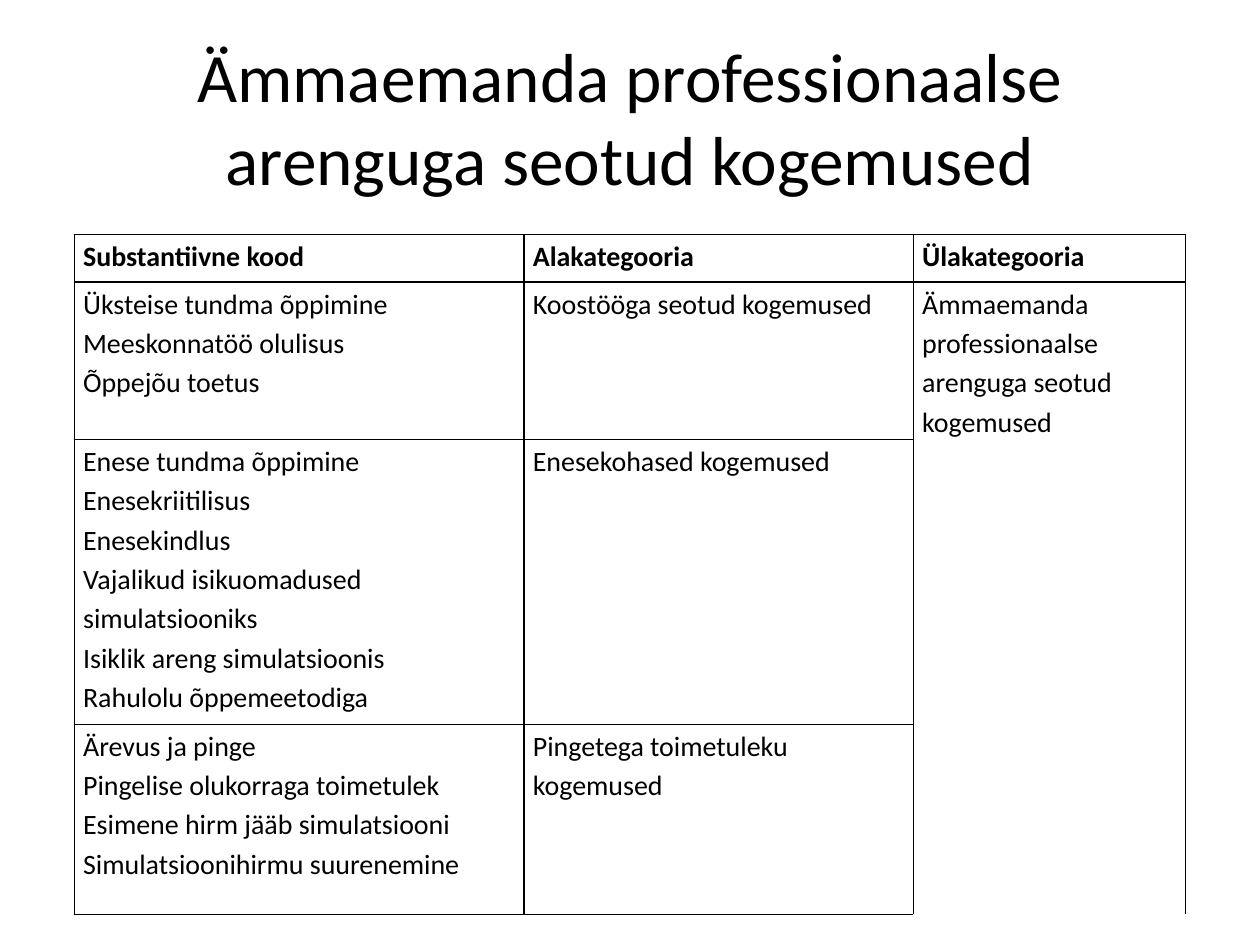
"""Build a slide with a table of codes and categories of midwives' professional growth."""
import lxml.etree
import pptx
import pptx.dml.color
import pptx.enum.text
import pptx.oxml.ns
import pptx.util

BLACK = pptx.dml.color.RGBColor(0, 0, 0)
FONT = "Calibri"
TOPIC = "Ämmaemanda professionaalse arenguga seotud kogemused"
COLUMN_WIDTHS = [3.57, 3.09, 2.16]
ROW_HEIGHTS = [0.38, 1.25, 2.26, 1.51]
ROWS = [
    ["Substantiivne kood", "Alakategooria", "Ülakategooria"],
    ["Üksteise tundma õppimine\nMeeskonnatöö olulisus\nÕppejõu toetus",
     "Koostööga seotud kogemused", TOPIC],
    ["Enese tundma õppimine\nEnesekriitilisus\nEnesekindlus\n"
     "Vajalikud isikuomadused simulatsiooniks\n"
     "Isiklik areng simulatsioonis\nRahulolu õppemeetodiga",
     "Enesekohased kogemused", ""],
    ["Ärevus ja pinge\nPingelise olukorraga toimetulek\n"
     "Esimene hirm jääb simulatsiooni\nSimulatsioonihirmu suurenemine",
     "Pingetega toimetuleku kogemused", ""],
]


def add_borders(cell, sides):
    properties = cell._tc.get_or_add_tcPr()
    for side in sides:
        line = lxml.etree.SubElement(
            properties, pptx.oxml.ns.qn(f"a:ln{side}"), w=str(pptx.util.Pt(1)))
        fill = lxml.etree.SubElement(line, pptx.oxml.ns.qn("a:solidFill"))
        lxml.etree.SubElement(fill, pptx.oxml.ns.qn("a:srgbClr"), val=str(BLACK))


def style_paragraph(paragraph, size, bold=False):
    paragraph.font.name = FONT
    paragraph.font.size = pptx.util.Pt(size)
    paragraph.font.bold = bold
    paragraph.font.color.rgb = BLACK


presentation = pptx.Presentation()
presentation.slide_width = pptx.util.Inches(10)
presentation.slide_height = pptx.util.Inches(7.5)
slide = presentation.slides.add_slide(presentation.slide_layouts[6])
width, height = presentation.slide_width, presentation.slide_height

title = slide.shapes.add_textbox(
    int(width * 0.05), int(height * 0.04), int(width * 0.9), pptx.util.Inches(1.25))
title.text_frame.word_wrap = True
title.text_frame.vertical_anchor = pptx.enum.text.MSO_ANCHOR.MIDDLE
title.text_frame.text = TOPIC
title_paragraph = title.text_frame.paragraphs[0]
title_paragraph.alignment = pptx.enum.text.PP_ALIGN.CENTER
style_paragraph(title_paragraph, 39.6)

table_width = pptx.util.Inches(sum(COLUMN_WIDTHS))
table = slide.shapes.add_table(
    len(ROW_HEIGHTS), len(COLUMN_WIDTHS), (width - table_width) // 2,
    pptx.util.Inches(1.86), table_width, pptx.util.Inches(sum(ROW_HEIGHTS))).table
table.horz_banding = False
for column, column_width in zip(table.columns, COLUMN_WIDTHS):
    column.width = pptx.util.Inches(column_width)
for row, row_height in zip(table.rows, ROW_HEIGHTS):
    row.height = pptx.util.Inches(row_height)
last_row, last_column = len(ROW_HEIGHTS) - 1, len(COLUMN_WIDTHS) - 1
table.cell(1, last_column).merge(table.cell(last_row, last_column))

for row_index, texts in enumerate(ROWS):
    for column_index, text in enumerate(texts):
        cell = table.cell(row_index, column_index)
        merged = cell.is_merge_origin or cell.is_spanned
        top = "" if cell.is_spanned else "T"
        bottom = "" if merged and row_index < last_row else "B"
        add_borders(cell, "LR" + top + bottom)
        cell.fill.background()
        cell.margin_left = cell.margin_right = pptx.util.Inches(0.07)
        cell.margin_top = cell.margin_bottom = 0
        if text:
            cell.text = text
            for paragraph in cell.text_frame.paragraphs:
                paragraph.line_spacing = 1.15
                style_paragraph(paragraph, 16, bold=row_index == 0)

presentation.save("out.pptx")
